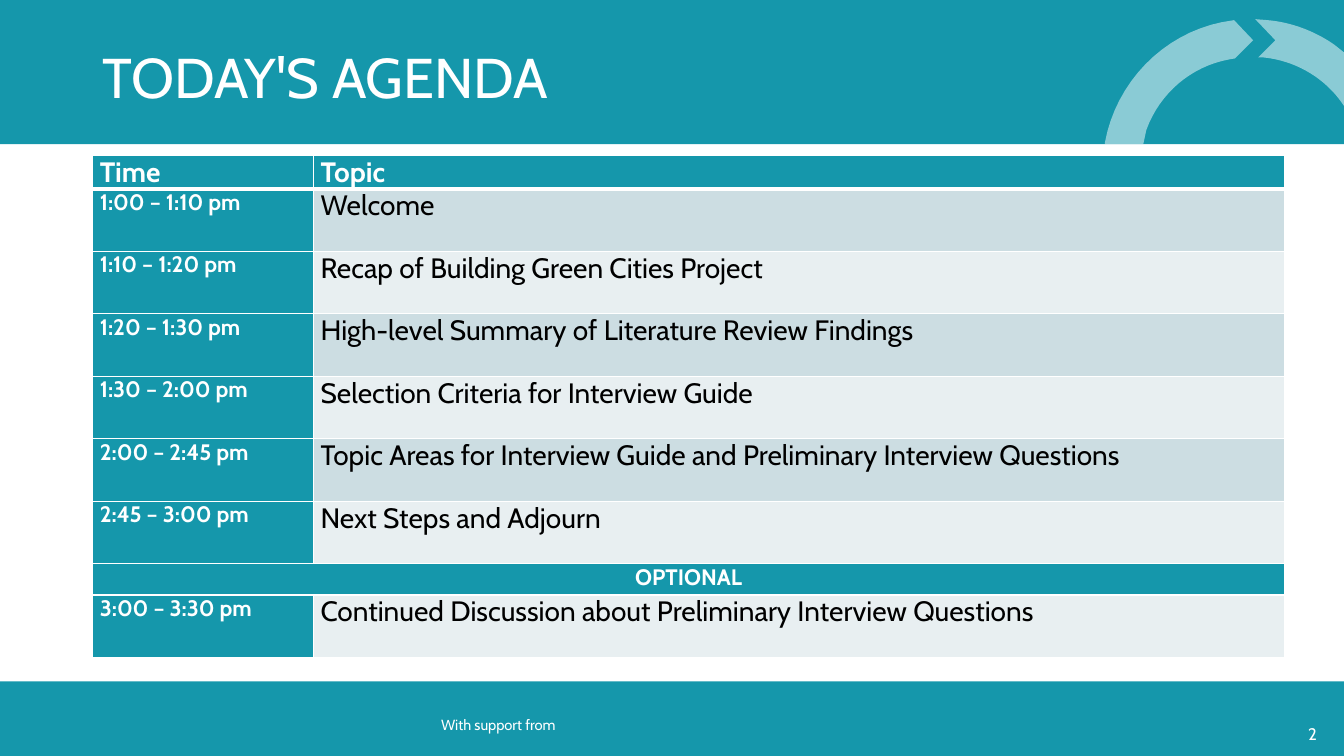
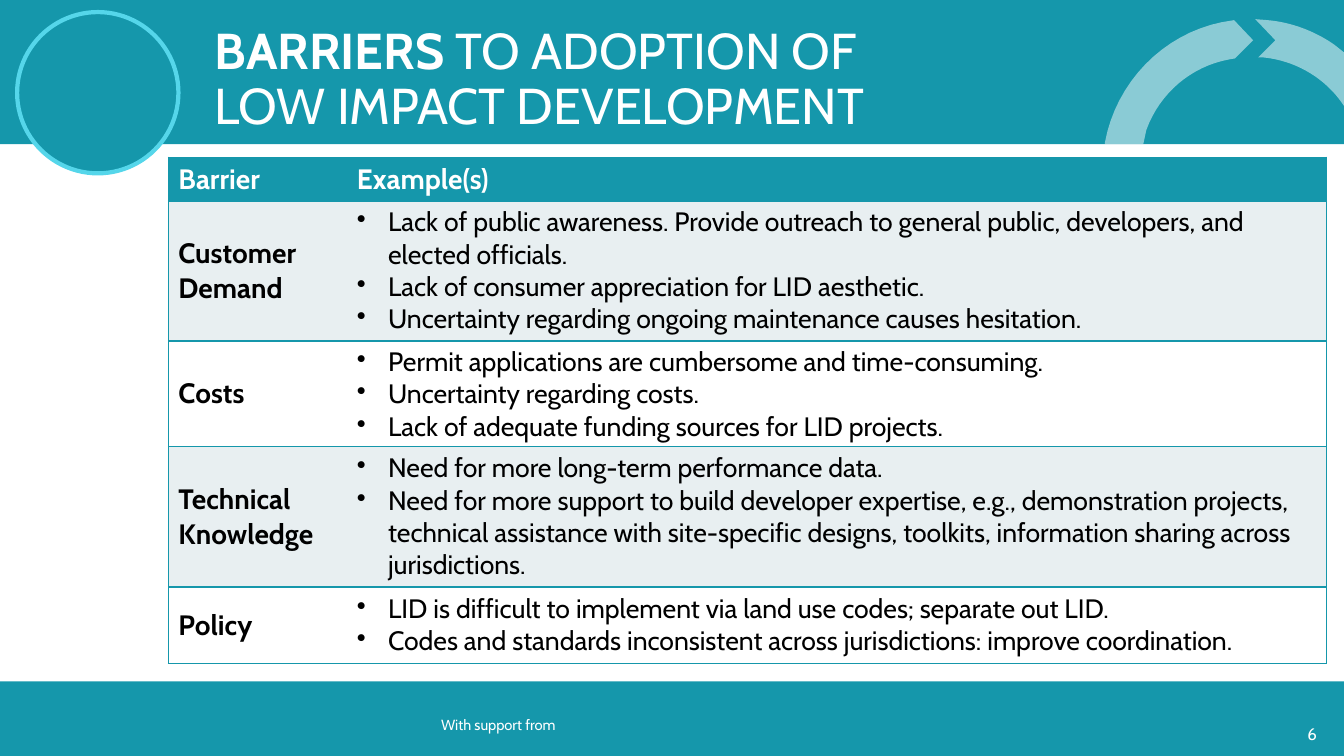
"""Build the agenda and barriers slides of a workshop presentation."""
from typing import NamedTuple

from lxml.etree import SubElement
from pptx import Presentation
from pptx.dml.color import RGBColor
from pptx.enum.shapes import MSO_SHAPE as SHAPE
from pptx.enum.text import MSO_ANCHOR as ANCHOR, PP_ALIGN as ALIGN
from pptx.oxml.ns import qn
from pptx.util import Inches, Pt

FONT = "Cabin"
TEAL, CYAN, WHITE, BLACK = "1597AB", "55D6EA", "FFFFFF", "000000"
BAND_DARK, BAND_LIGHT = "CCDDE2", "E8EFF1"
WIDTH, HEIGHT = 13.33, 7.5
SIDES = "LRTB"

ARC_PARTS = (
    ((12.24, 0.2), (12.43, 0.4), (12.25, 0.58), (12.19, 0.59),
     (11.81, 0.66, 11.5, 0.93, 11.37, 1.29), (11.34, 1.43), (10.96, 1.43),
     (10.96, 1.41), (11.07, 0.82, 11.53, 0.34, 12.12, 0.22)),
    ((12.45, 0.19), (12.57, 0.2), (12.81, 0.22, 13.04, 0.31, 13.23, 0.44),
     (13.33, 0.52), (13.33, 1.05), (13.28, 0.98),
     (13.1, 0.75, 12.83, 0.6, 12.53, 0.57), (12.48, 0.57), (12.65, 0.4)),
)


class Session(NamedTuple):
    time: str
    topic: str


class Barrier(NamedTuple):
    name: str
    examples: tuple[str, ...]
    height: float


SESSIONS = (
    Session("1:00 – 1:10 pm", "Welcome"),
    Session("1:10 – 1:20 pm", "Recap of Building Green Cities Project"),
    Session("1:20 – 1:30 pm", "High-level Summary of Literature Review Findings"),
    Session("1:30 – 2:00 pm", "Selection Criteria for Interview Guide"),
    Session("2:00 – 2:45 pm",
            "Topic Areas for Interview Guide and Preliminary Interview Questions"),
    Session("2:45 – 3:00 pm", "Next Steps and Adjourn"),
    Session("OPTIONAL", ""),
    Session("3:00 – 3:30 pm",
            "Continued Discussion about Preliminary Interview Questions"),
)

BARRIERS = (
    Barrier("Customer Demand", (
        "Lack of public awareness. Provide outreach to general public, "
        "developers, and elected officials.",
        "Lack of consumer appreciation for LID aesthetic.",
        "Uncertainty regarding ongoing maintenance causes hesitation."), 1.39),
    Barrier("Costs", (
        "Permit applications are cumbersome and time-consuming.",
        "Uncertainty regarding costs.",
        "Lack of adequate funding sources for LID projects."), 1.05),
    Barrier("Technical Knowledge", (
        "Need for more long-term performance data.",
        "Need for more support to build developer expertise, e.g., "
        "demonstration projects, technical assistance with site-specific "
        "designs, toolkits, information sharing across jurisdictions."), 1.39),
    Barrier("Policy", (
        "LID is difficult to implement via land use codes; separate out LID.",
        "Codes and standards inconsistent across jurisdictions: "
        "improve coordination."), 0.76),
)


def rgb(color: str) -> RGBColor:
    return RGBColor.from_string(color)


def write(tf, *paras, size=20, color=WHITE, bold=False, align=ALIGN.LEFT,
          spacing=None, bullet=False) -> None:
    tf.word_wrap = True
    for i, para in enumerate(paras):
        p = tf.add_paragraph() if i else tf.paragraphs[0]
        if bullet:
            pPr = p._p.get_or_add_pPr()
            pPr.set("marL", str(Inches(0.31)))
            pPr.set("indent", str(-Inches(0.31)))
            SubElement(pPr, qn("a:buChar"), char="•")
        p.alignment = align
        if spacing:
            p.line_spacing = spacing
        runs = ((para, bold),) if isinstance(para, str) else para
        for text, strong in runs:
            for j, line in enumerate(text.split("\n")):
                if j:
                    p.add_line_break()
                r = p.add_run()
                r.text = line
                r.font.name, r.font.size, r.font.bold = FONT, Pt(size), strong
                r.font.color.rgb = rgb(color)


def add_text(s, x: float, y: float, w: float, h: float, *paras,
             anchor=ANCHOR.MIDDLE, **fmt) -> None:
    tf = s.shapes.add_textbox(Inches(x), Inches(y), Inches(w), Inches(h)).text_frame
    tf.vertical_anchor = anchor
    write(tf, *paras, **fmt)


def paint(sp, fill: str, line: str | None = None, width: float = 0) -> None:
    sp.shadow.inherit = False
    sp.fill.solid()
    sp.fill.fore_color.rgb = rgb(fill)
    if line:
        sp.line.color.rgb = rgb(line)
        sp.line.width = Pt(width)
    else:
        sp.line.fill.background()


def add_box(s, kind, x: float, y: float, w: float, h: float, *style) -> None:
    paint(s.shapes.add_shape(kind, Inches(x), Inches(y), Inches(w), Inches(h)), *style)


def trace(part, steps: int = 16) -> list[tuple[int, int]]:
    points = [part[0]]
    for seg in part[1:]:
        if len(seg) == 2:
            points.append(seg)
            continue
        x0, y0 = points[-1]
        x1, y1, x2, y2, x3, y3 = seg
        for i in range(1, steps + 1):
            t = i / steps
            a, b, c, d = (1 - t) ** 3, 3 * t * (1 - t) ** 2, 3 * t * t * (1 - t), t ** 3
            points.append((a * x0 + b * x1 + c * x2 + d * x3,
                           a * y0 + b * y1 + c * y2 + d * y3))
    return [(Inches(x), Inches(y)) for x, y in points]


def add_arc(s) -> None:
    first, second = (trace(part) for part in ARC_PARTS)
    fb = s.shapes.build_freeform(*first[0])
    fb.add_line_segments(first[1:])
    fb.move_to(*second[0])
    fb.add_line_segments(second[1:])
    sp = fb.convert_to_shape()
    paint(sp, WHITE)
    clr = sp._element.spPr.find(qn("a:solidFill")).find(qn("a:srgbClr"))
    SubElement(clr, qn("a:alpha"), val="50000")


def add_slide(prs, number: int):
    s = prs.slides.add_slide(prs.slide_layouts[6])
    add_box(s, SHAPE.RECTANGLE, 0, 0, WIDTH, 1.43, TEAL)
    add_box(s, SHAPE.RECTANGLE, 0, 6.76, WIDTH, 0.74, TEAL)
    add_arc(s)
    add_text(s, 4.05, 7.07, 1.56, 0.24, "With support from", size=10.5,
             align=ALIGN.RIGHT, spacing=0.9, anchor=ANCHOR.TOP)
    add_text(s, 6.13, 7.08, 7.03, 0.4, str(number), size=12, align=ALIGN.RIGHT)
    return s


def add_title(s, x: float, w: float, title, size: float) -> None:
    add_text(s, x, 0.4, w, 0.8, title, size=size, spacing=0.9)


def add_grid(s, x: float, y: float, cols, rows):
    tbl = s.shapes.add_table(len(rows), len(cols), Inches(x), Inches(y),
                             Inches(sum(cols)), Inches(sum(rows))).table
    tbl.first_row = tbl.horz_banding = False
    for col, w in zip(tbl.columns, cols):
        col.width = Inches(w)
    for row, h in zip(tbl.rows, rows):
        row.height = Inches(h)
    return tbl


def fill_cell(cell, fill: str, borders: dict[str, float], line: str, *paras,
              anchor=ANCHOR.TOP, **fmt) -> None:
    tcPr = cell._tc.get_or_add_tcPr()
    for side in SIDES:
        width = borders.get(side, 0)
        ln = SubElement(tcPr, qn(f"a:ln{side}"), w=str(Pt(width)))
        if width:
            SubElement(SubElement(ln, qn("a:solidFill")), qn("a:srgbClr"), val=line)
        else:
            SubElement(ln, qn("a:noFill"))
    cell.fill.solid()
    cell.fill.fore_color.rgb = rgb(fill)
    cell.vertical_anchor = anchor
    write(cell.text_frame, *paras, **fmt)


def agenda_cell(cell, fill: str, text: str, rule: dict[str, float], **fmt) -> None:
    cell.margin_left = cell.margin_right = Inches(0.07)
    cell.margin_top = cell.margin_bottom = 0
    fill_cell(cell, fill, dict.fromkeys(SIDES, 1) | rule, WHITE, text, **fmt)


def agenda_slide(prs) -> None:
    s = add_slide(prs, 2)
    add_title(s, 0.92, 11.5, "TODAY'S AGENDA", 40)
    heights = [0.31] + [0.62 if item.topic else 0.31 for item in SESSIONS]
    tbl = add_grid(s, 0.92, 1.54, (2.19, 9.63), heights)
    for c, text in enumerate(("Time", "Topic")):
        agenda_cell(tbl.cell(0, c), TEAL, text, {"B": 3}, bold=True)
    for i, item in enumerate(SESSIONS, 1):
        left, right = tbl.cell(i, 0), tbl.cell(i, 1)
        rule = {"T": 3} if i == 1 else {}
        if item.topic:
            fill = BAND_DARK if i % 2 else BAND_LIGHT
            agenda_cell(right, fill, item.topic, rule, color=BLACK)
        else:
            left.merge(right)
        agenda_cell(left, TEAL, item.time, rule, size=16, bold=True,
                    align=ALIGN.LEFT if item.topic else ALIGN.CENTER)


def barriers_slide(prs) -> None:
    s = add_slide(prs, 6)
    add_title(s, 2.03, 10.04, (("BARRIERS", True),
                               (" TO ADOPTION OF\nLOW IMPACT DEVELOPMENT", False)), 36)
    tbl = add_grid(s, 1.67, 1.56, (1.77, 9.72),
                   [0.43] + [item.height for item in BARRIERS])
    edges = [dict.fromkeys(sides, 1) for sides in ("LTB", "RTB")]
    for c, text in enumerate(("Barrier", "Example(s)")):
        fill_cell(tbl.cell(0, c), TEAL, edges[c], TEAL, text,
                  anchor=ANCHOR.MIDDLE, bold=True)
    for i, item in enumerate(BARRIERS, 1):
        fill = BAND_LIGHT if i % 2 else WHITE
        fill_cell(tbl.cell(i, 0), fill, edges[0], TEAL, item.name,
                  anchor=ANCHOR.MIDDLE, color=BLACK, bold=True)
        fill_cell(tbl.cell(i, 1), fill, edges[1], TEAL, *item.examples,
                  anchor=ANCHOR.MIDDLE, size=19, color=BLACK, bullet=True)
    add_box(s, SHAPE.OVAL, 0.17, 0.12, 1.6, 1.6, TEAL, CYAN, 3)


def main() -> None:
    prs = Presentation()
    prs.slide_width, prs.slide_height = Inches(WIDTH), Inches(HEIGHT)
    agenda_slide(prs)
    barriers_slide(prs)
    prs.save("out.pptx")


if __name__ == "__main__":
    main()
